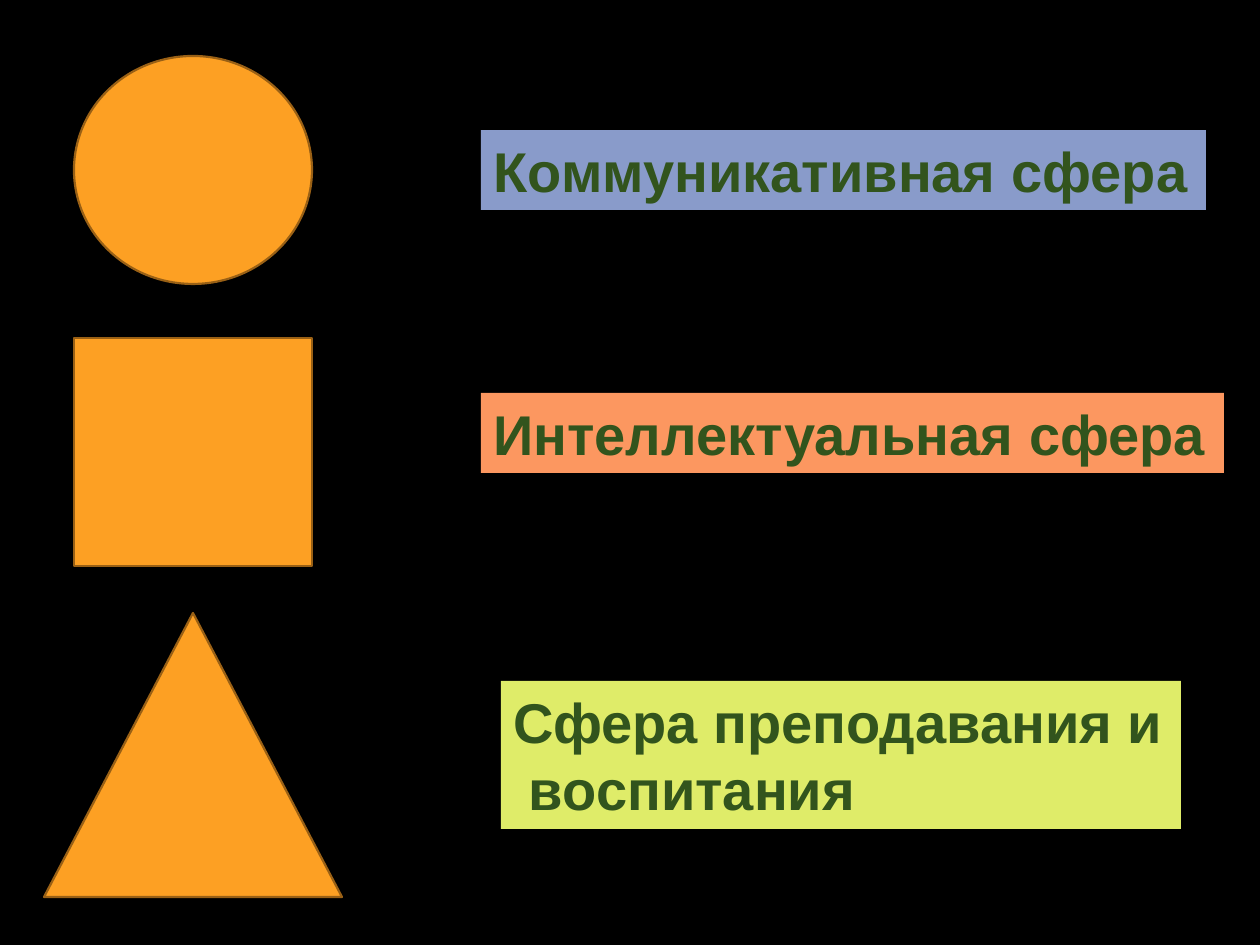
from pptx import Presentation
from pptx.dml.color import RGBColor
from pptx.enum.shapes import MSO_SHAPE
from pptx.enum.text import MSO_AUTO_SIZE
from pptx.util import Emu, Inches, Pt

PIXELS_PER_INCH = 126
BLACK = RGBColor(0x00, 0x00, 0x00)
ORANGE = RGBColor(0xFD, 0xA0, 0x23)
BROWN = RGBColor(0x99, 0x60, 0x15)
GREEN = RGBColor(0x32, 0x54, 0x1D)
BLUE = RGBColor(0x89, 0x9B, 0xCA)
CORAL = RGBColor(0xFC, 0x97, 0x60)
LIME = RGBColor(0xDF, 0xEC, 0x69)


def px(length):
    return Emu(round(length * Inches(1) / PIXELS_PER_INCH))


class SlideBuilder:
    font_name = "Arial"
    font_size = Pt(32)
    outline_width = Pt(1.25)

    def __init__(self, slide):
        self.slide = slide

    def background(self, color):
        fill = self.slide.background.fill
        fill.solid()
        fill.fore_color.rgb = color

    def figure(self, kind, left, top, width, height):
        shape = self.slide.shapes.add_shape(kind, px(left), px(top), px(width), px(height))
        shape.shadow.inherit = False
        shape.fill.solid()
        shape.fill.fore_color.rgb = ORANGE
        shape.line.color.rgb = BROWN
        shape.line.width = self.outline_width

    def label(self, text, color, left, top, width, height):
        box = self.slide.shapes.add_textbox(px(left), px(top), px(width), px(height))
        box.fill.solid()
        box.fill.fore_color.rgb = color
        frame = box.text_frame
        frame.word_wrap = False
        frame.auto_size = MSO_AUTO_SIZE.SHAPE_TO_FIT_TEXT
        frame.text = text
        for paragraph in frame.paragraphs:
            font = paragraph.font
            font.name = self.font_name
            font.size = self.font_size
            font.bold = True
            font.color.rgb = GREEN


def main():
    presentation = Presentation()
    presentation.slide_width = Inches(10)
    presentation.slide_height = Inches(7.5)
    builder = SlideBuilder(presentation.slides.add_slide(presentation.slide_layouts[6]))

    builder.background(BLACK)
    builder.figure(MSO_SHAPE.OVAL, 74, 56, 238, 228)
    builder.figure(MSO_SHAPE.RECTANGLE, 74, 338, 238, 228)
    builder.figure(MSO_SHAPE.ISOSCELES_TRIANGLE, 44, 613, 298, 284)

    builder.label("Коммуникативная сфера", BLUE, 481, 130, 725, 80)
    builder.label("Интеллектуальная сфера", CORAL, 481, 393, 743, 80)
    builder.label("Сфера преподавания и\n воспитания", LIME, 501, 681, 680, 148)

    presentation.save("out.pptx")


if __name__ == "__main__":
    main()
